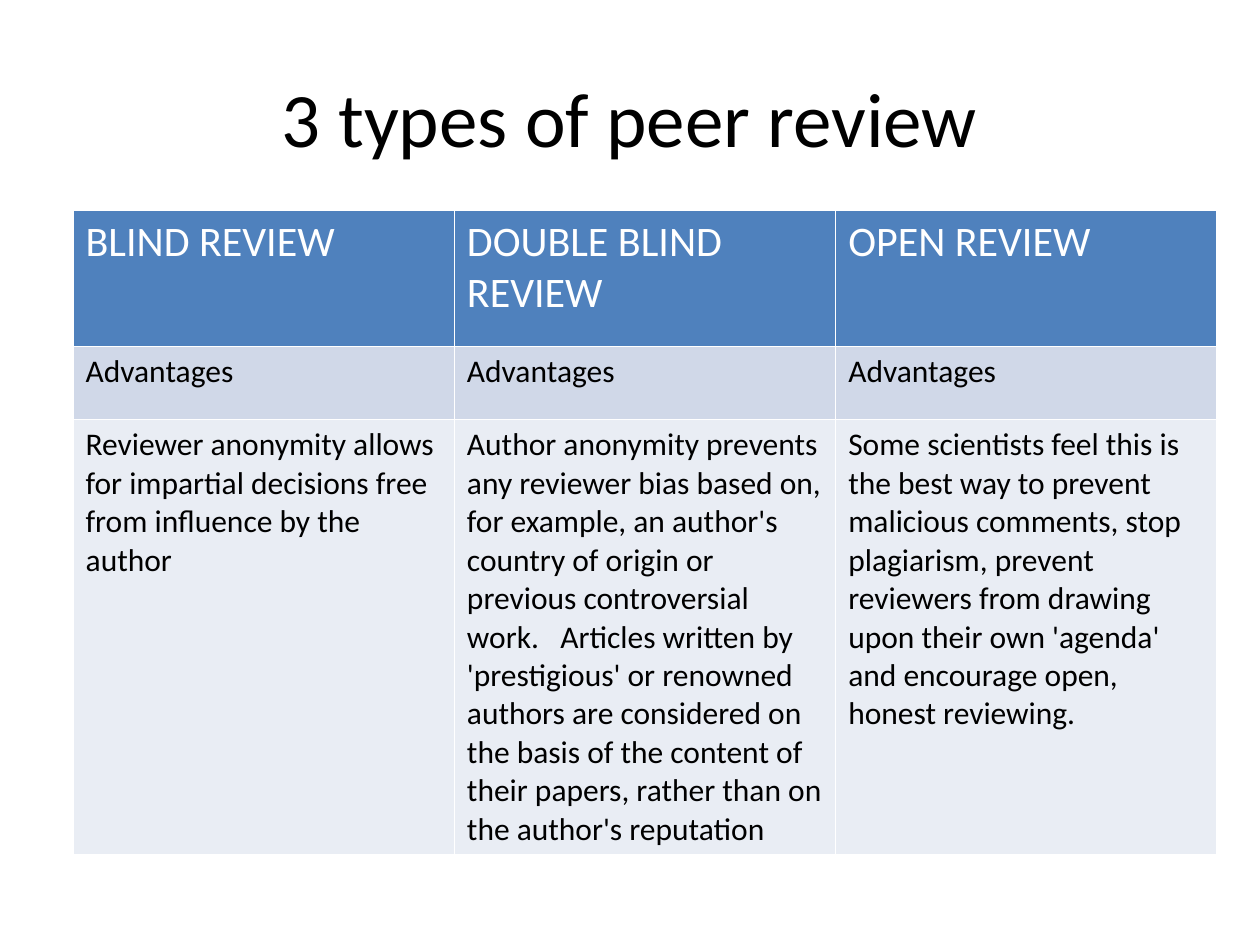
from dataclasses import dataclass

from lxml.etree import SubElement
from pptx import Presentation
from pptx.dml.color import RGBColor as RGB
from pptx.enum.text import MSO_ANCHOR as Anchor, PP_ALIGN as Align
from pptx.oxml.ns import qn
from pptx.util import Inches, Pt

WIDE, HIGH = 10, 7.5


@dataclass(frozen=True)
class Theme:
    font: str = "Calibri"
    ink: str = "000000"
    paper: str = "FFFFFF"
    head: str = "4F81BD"
    band: str = "D0D8E8"
    pale: str = "E9EDF4"
    title: int = 44
    label: int = 24
    body: int = 18
    rule: int = 1


THEME = Theme()

TYPES = [
    ("BLIND REVIEW", "Reviewer anonymity allows for impartial decisions free "
     "from influence by the author"),
    ("DOUBLE BLIND REVIEW", "Author anonymity prevents any reviewer bias based "
     "on, for example, an author's country of origin or previous controversial "
     "work.   Articles written by 'prestigious' or renowned authors are "
     "considered on the basis of the content of their papers, rather than on "
     "the author's reputation"),
    ("OPEN REVIEW", "Some scientists feel this is the best way to prevent "
     "malicious comments, stop plagiarism, prevent reviewers from drawing upon "
     "their own 'agenda' and encourage open, honest reviewing."),
]


def write(frame, text, size=THEME.body, color=THEME.ink, align=Align.LEFT):
    frame.word_wrap = True
    para = frame.paragraphs[0]
    para.alignment = align
    run = para.add_run()
    run.text = text
    font = run.font
    font.name, font.size, font.bold = THEME.font, Pt(size), False
    font.color.rgb = RGB.from_string(color)


def edge(cell):
    """Draw a thin rule on all four sides; call before the fill is set."""
    props = cell._tc.get_or_add_tcPr()
    for side in "LRTB":
        line = SubElement(props, qn(f"a:ln{side}"), w=str(Pt(THEME.rule)))
        fill = SubElement(line, qn("a:solidFill"))
        SubElement(fill, qn("a:srgbClr"), val=THEME.paper)


def add_title(slide, text):
    left, top = 0.05 * WIDE, 0.04 * HIGH
    box = slide.shapes.add_textbox(
        Inches(left), Inches(top), Inches(WIDE - 2 * left), Inches(1.25))
    box.text_frame.vertical_anchor = Anchor.MIDDLE
    write(box.text_frame, text, size=THEME.title, align=Align.CENTER)


def add_grid(slide, rows, highs, looks):
    """Add a table; each row has a height and a look (fill, size, colour)."""
    wide = 9.08
    table = slide.shapes.add_table(
        len(rows), len(rows[0]), Inches(0.58), Inches(1.67),
        Inches(wide), Inches(sum(highs))).table
    for col in table.columns:
        col.width = Inches(wide / len(rows[0]))
    for line, texts, high, look in zip(table.rows, rows, highs, looks):
        line.height = Inches(high)
        fill, size, color = look
        for cell, text in zip(line.cells, texts):
            edge(cell)
            cell.fill.solid()
            cell.fill.fore_color.rgb = RGB.from_string(fill)
            write(cell.text_frame, text, size=size, color=color)


def main():
    deck = Presentation()
    deck.slide_width, deck.slide_height = Inches(WIDE), Inches(HIGH)
    slide = deck.slides.add_slide(deck.slide_layouts[6])
    names, gains = zip(*TYPES)
    add_grid(
        slide,
        rows=[names, ["Advantages"] * len(TYPES), gains],
        highs=[1.08, 0.58, 3.4],
        looks=[(THEME.head, THEME.label, THEME.paper),
               (THEME.band, THEME.body, THEME.ink),
               (THEME.pale, THEME.body, THEME.ink)])
    add_title(slide, "3 types of peer review")
    deck.save("out.pptx")


if __name__ == "__main__":
    main()
